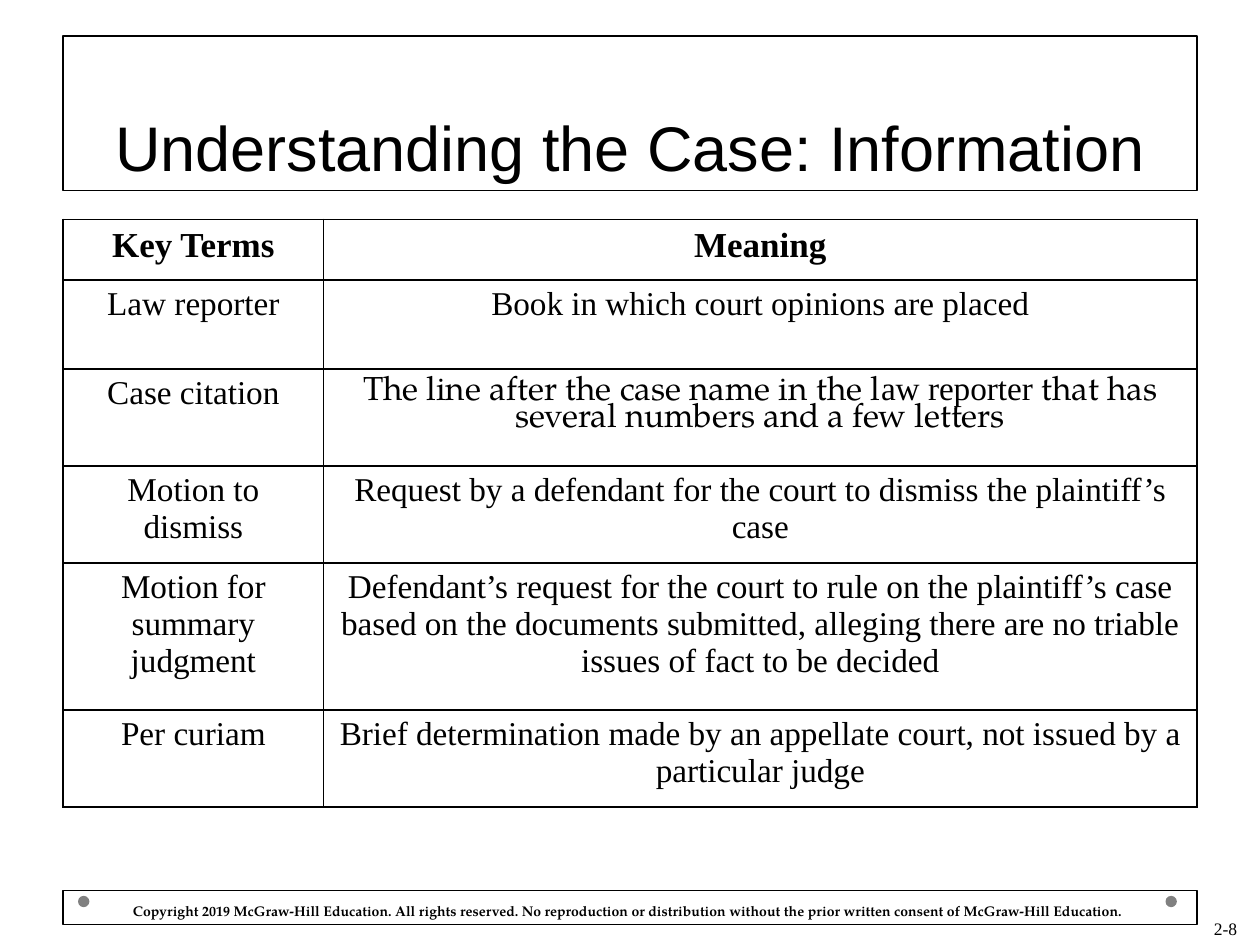
import pptx
import pptx.util
import pptx.dml.color
import pptx.enum.shapes
import pptx.enum.text
import pptx.oxml
import pptx.oxml.ns

Pt = pptx.util.Pt
RGBColor = pptx.dml.color.RGBColor
ALIGN = pptx.enum.text.PP_ALIGN
ANCHOR = pptx.enum.text.MSO_ANCHOR
SHAPE = pptx.enum.shapes.MSO_SHAPE

BLACK = RGBColor(0x00, 0x00, 0x00)
GRAY = RGBColor(0x80, 0x80, 0x80)
SERIF, BOOK, SANS = "Times New Roman", "TeX Gyre Pagella", "Arial"

LEFT, WIDTH = 36, 648
COLUMNS = (149, 499)
ROW_HEIGHTS = (34.5, 51, 55.4, 55.4, 84.1, 55.4)
# Each meaning is a list of (text, font) runs
TERMS = [
    ("Key Terms", [("Meaning", SERIF)]),
    ("Law reporter", [("Book in which court opinions are placed", SERIF)]),
    ("Case citation", [("The line after the case name in the l", BOOK),
                       ("aw reporter", SERIF),
                       (" that has several numbers and a few letters", BOOK)]),
    ("Motion to dismiss",
     [("Request by a defendant for the court to dismiss the plaintiff’s case", SERIF)]),
    ("Motion for summary judgment",
     [("Defendant’s request for the court to rule on the plaintiff’s case based on "
       "the documents submitted, alleging there are no triable issues of fact to be "
       "decided", SERIF)]),
    ("Per curiam",
     [("Brief determination made by an appellate court, not issued by a particular "
       "judge", SERIF)]),
]
COPYRIGHT = ("Copyright 2019 McGraw-Hill Education. All rights reserved. No reproduction "
             "or distribution without the prior written consent of McGraw-Hill Education.")


def add_run(p, text, font, size, bold=False):
    r = p.add_run()
    r.text = text
    r.font.name = font
    r.font.size = Pt(size)
    r.font.bold = bold
    r.font.color.rgb = BLACK


def outline(shape):
    shape.fill.background()
    shape.line.color.rgb = BLACK
    shape.line.width = Pt(0.75)


def set_borders(cell):
    tc_pr = cell._tc.get_or_add_tcPr()
    for i, side in enumerate(("lnL", "lnR", "lnT", "lnB")):
        tc_pr.insert(i, pptx.oxml.parse_xml(
            f'<a:{side} {pptx.oxml.ns.nsdecls("a")} w="12700"><a:solidFill>'
            f'<a:srgbClr val="{BLACK}"/></a:solidFill></a:{side}>'))


def place_title(s, x, y, w, h):
    sp = s.shapes.title
    sp.left, sp.top, sp.width, sp.height = Pt(x), Pt(y), Pt(w), Pt(h)
    outline(sp)
    tf = sp.text_frame
    tf.auto_size = pptx.enum.text.MSO_AUTO_SIZE.NONE
    tf.vertical_anchor = ANCHOR.BOTTOM
    p = tf.paragraphs[0]
    p.alignment = ALIGN.CENTER
    add_run(p, "Understanding the Case: Information", SANS, 36)


def add_terms(s, x, y, w, h):
    table = s.shapes.add_table(len(TERMS), 2, Pt(x), Pt(y), Pt(w), Pt(h)).table
    table.horz_banding = False
    for column, width in zip(table.columns, COLUMNS):
        column.width = Pt(width)
    for i, (term, meaning) in enumerate(TERMS):
        table.rows[i].height = Pt(ROW_HEIGHTS[i])
        for j, runs in enumerate(([(term, SERIF)], meaning)):
            cell = table.cell(i, j)
            cell.fill.background()
            set_borders(cell)
            p = cell.text_frame.paragraphs[0]
            p.alignment = ALIGN.CENTER
            if len(runs) > 1:
                p.line_spacing = 0.8
            for text, font in runs:
                add_run(p, text, font, 20 if i == 0 else 19, bold=i == 0)


def add_footer(s, x, y, w, h):
    # Corner dots
    dot = 6.5
    for dot_x in (x + 8.6, x + w - 18):
        sp = s.shapes.add_shape(SHAPE.OVAL, Pt(dot_x), Pt(y + 2.9), Pt(dot), Pt(dot))
        sp.shadow.inherit = False
        sp.fill.solid()
        sp.fill.fore_color.rgb = GRAY
        sp.line.fill.background()

    # Copyright box
    sp = s.shapes.add_shape(SHAPE.RECTANGLE, Pt(x), Pt(y), Pt(w), Pt(h))
    sp.shadow.inherit = False
    outline(sp)
    tf = sp.text_frame
    tf.word_wrap = True
    tf.vertical_anchor = ANCHOR.TOP
    tf.margin_left, tf.margin_top, tf.margin_bottom = Pt(40), Pt(6.5), Pt(0)
    p = tf.paragraphs[0]
    p.alignment = ALIGN.LEFT
    add_run(p, COPYRIGHT, BOOK, 8, bold=True)


def add_page_number(s, x, y, w, h):
    tf = s.shapes.add_textbox(Pt(x), Pt(y), Pt(w), Pt(h)).text_frame
    tf.word_wrap = True
    tf.vertical_anchor = ANCHOR.BOTTOM
    p = tf.paragraphs[0]
    p.alignment = ALIGN.RIGHT
    add_run(p, "2-8", SERIF, 10)


def main():
    prs = pptx.Presentation()
    prs.slide_width, prs.slide_height = Pt(720), Pt(540)
    s = prs.slides.add_slide(prs.slide_layouts[5])
    place_title(s, LEFT, 20.5, WIDTH, 88.5)
    add_terms(s, LEFT, 125.4, WIDTH, sum(ROW_HEIGHTS))
    add_footer(s, LEFT, 509, WIDTH, 19.5)
    add_page_number(s, 546, 504, 168, 36)
    prs.save("out.pptx")


if __name__ == "__main__":
    main()
